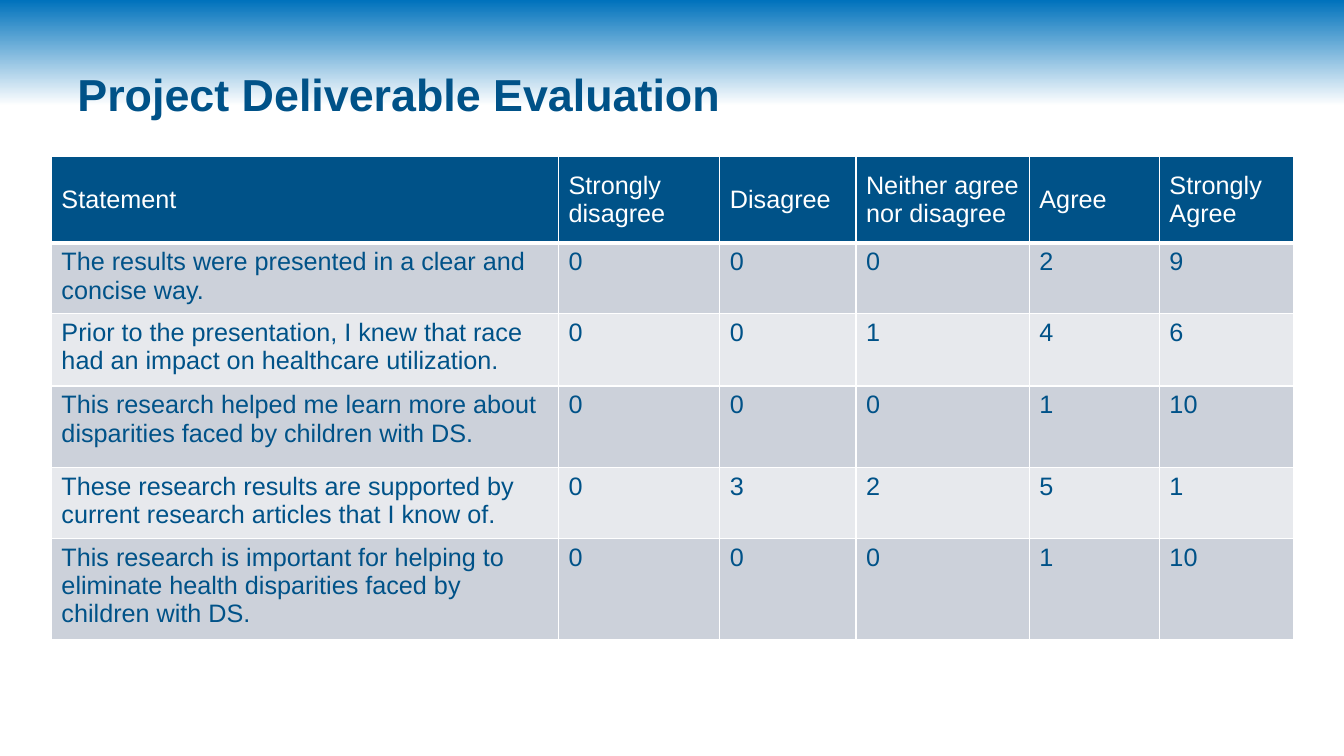
from dataclasses import dataclass

from lxml import etree
from pptx import Presentation
from pptx import util as u
from pptx.dml.color import RGBColor
from pptx.enum import text
from pptx.oxml import ns

PX = 9144  # EMU per px, 100 px to the inch


@dataclass(frozen=True)
class Theme:
    font: str = "Arial"
    navy: str = "005288"
    sky: str = "0072BC"
    white: str = "FFFFFF"
    bands: tuple[str, str] = ("CCD1DA", "E7E9ED")
    title: int = 32
    body: int = 18
    rule: int = 1
    thick: int = 3


@dataclass(frozen=True)
class Row:
    high: int
    label: str
    votes: tuple[int, ...]


@dataclass(frozen=True)
class Look:
    fill: str
    ink: str
    anchor: text.MSO_ANCHOR
    base: int  # bottom border in points


THEME = Theme()
WIDTHS = (503, 160, 135, 172, 129, 133)
HEAD_HIGH = 86
HEADS = ("Statement", "Strongly disagree", "Disagree",
         "Neither agree nor disagree", "Agree", "Strongly Agree")
ROWS = (
    Row(66, "The results were presented in a clear and concise way.",
        (0, 0, 0, 2, 9)),
    Row(72, "Prior to the presentation, I knew that race had an impact "
        "on healthcare utilization.", (0, 0, 1, 4, 6)),
    Row(81, "This research helped me learn more about disparities faced "
        "by children with DS.", (0, 0, 0, 1, 10)),
    Row(66, "These research results are supported by current research "
        "articles that I know of.", (0, 3, 2, 5, 1)),
    Row(93, "This research is important for helping to eliminate health "
        "disparities faced by children with DS.", (0, 0, 0, 1, 10)),
)


def px(n: int) -> u.Emu:
    return u.Emu(n * PX)


def write(frame, words: str, size: int, ink: str, bold: bool = False) -> None:
    para = frame.paragraphs[0]
    para.text = words
    font = para.font
    font.name, font.size, font.bold = THEME.font, u.Pt(size), bold
    font.color.rgb = RGBColor.from_string(ink)


def edge(cell, base: int) -> None:
    """Draw the white cell borders; they must precede the fill."""
    props = cell._tc.get_or_add_tcPr()
    for i, side in enumerate("LRTB"):
        line = etree.Element(ns.qn(f"a:ln{side}"))
        wide = base if side == "B" else THEME.rule
        line.set("w", str(u.Pt(wide)))
        fill = etree.SubElement(line, ns.qn("a:solidFill"))
        etree.SubElement(fill, ns.qn("a:srgbClr")).set("val", THEME.white)
        props.insert(i, line)


def fill_row(table, index: int, high: int, words, look: Look) -> None:
    table.rows[index].height = px(high)
    for cell, word in zip(table.rows[index].cells, words):
        write(cell.text_frame, str(word), THEME.body, look.ink)
        cell.vertical_anchor = look.anchor
        cell.fill.solid()
        cell.fill.fore_color.rgb = RGBColor.from_string(look.fill)
        edge(cell, look.base)


def add_sky(slide) -> None:
    fill = slide.background.fill
    fill.gradient()
    fill.gradient_angle = 270
    stops = ((0, THEME.sky), (0.14, THEME.white))
    for stop, (place, ink) in zip(fill.gradient_stops, stops):
        stop.position = place
        stop.color.rgb = RGBColor.from_string(ink)


def add_title(slide) -> None:
    box = slide.shapes.add_textbox(px(67), px(30), px(1200), px(125))
    frame = box.text_frame
    frame.word_wrap = True
    frame.vertical_anchor = text.MSO_ANCHOR.MIDDLE
    write(frame, "Project Deliverable Evaluation", THEME.title, THEME.navy, True)


def add_grid(slide) -> None:
    high = HEAD_HIGH + sum(row.high for row in ROWS)
    table = slide.shapes.add_table(len(ROWS) + 1, len(WIDTHS), px(51), px(155),
                                   px(sum(WIDTHS)), px(high)).table
    table.first_row = table.horz_banding = False
    for col, wide in zip(table.columns, WIDTHS):
        col.width = px(wide)
    head = Look(THEME.navy, THEME.white, text.MSO_ANCHOR.MIDDLE, THEME.thick)
    fill_row(table, 0, HEAD_HIGH, HEADS, head)
    for i, row in enumerate(ROWS):
        look = Look(THEME.bands[i % 2], THEME.navy, text.MSO_ANCHOR.TOP,
                    THEME.rule)
        fill_row(table, i + 1, row.high, (row.label, *row.votes), look)


def main() -> None:
    deck = Presentation()
    deck.slide_width, deck.slide_height = px(1333), px(750)
    slide = deck.slides.add_slide(deck.slide_layouts[6])
    add_sky(slide)
    add_title(slide)
    add_grid(slide)
    deck.save("out.pptx")


if __name__ == "__main__":
    main()
